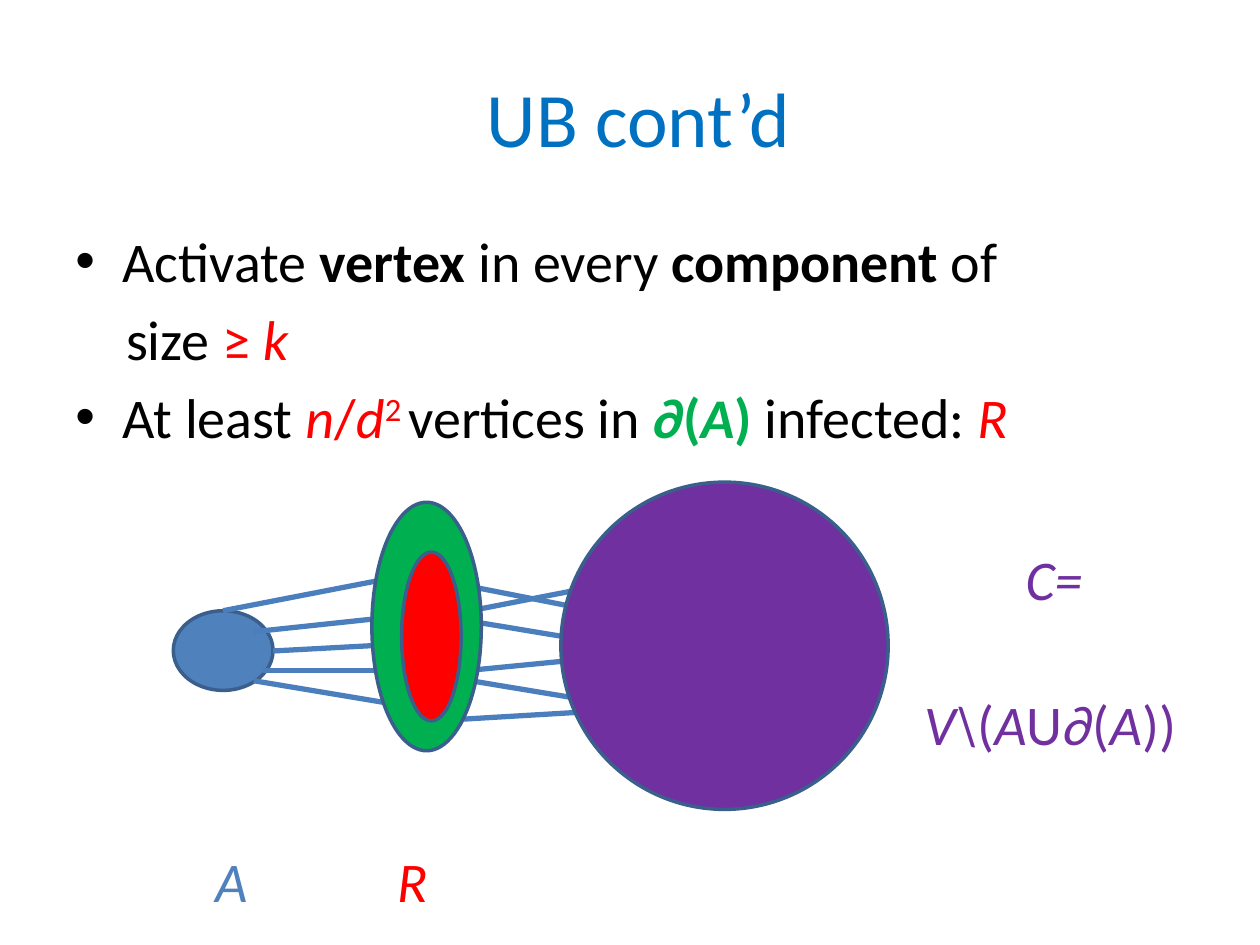
from pptx import Presentation
from pptx.dml.color import RGBColor as RGB
from pptx.enum.shapes import MSO_CONNECTOR as CONN, MSO_SHAPE as SHAPE
from pptx.enum.text import MSO_ANCHOR as ANCHOR, PP_ALIGN as ALIGN
from pptx.oxml.ns import qn
from pptx.util import Pt
from lxml.etree import SubElement as Sub

BLACK = RGB(0, 0, 0)
RED = RGB(0xFF, 0, 0)
GREEN = RGB(0, 0xB0, 0x50)
BLUE = RGB(0x4F, 0x81, 0xBD)
PURPLE = RGB(0x70, 0x30, 0xA0)
TITLE = RGB(0, 0x70, 0xC0)
EDGE = RGB(0x3A, 0x5F, 0x8C)
LINK = RGB(0x4B, 0x7E, 0xBC)


class Deck:
    font = "Calibri"
    size = 32
    indent = 27

    def __init__(self, wide, high):
        self.prs = Presentation()
        self.prs.slide_width, self.prs.slide_height = Pt(wide), Pt(high)
        self.slide = self.prs.slides.add_slide(self.prs.slide_layouts[6])

    def frame(self, left, top, wide, high, inset=True):
        box = self.slide.shapes.add_textbox(Pt(left), Pt(top), Pt(wide), Pt(high))
        text = box.text_frame
        text.word_wrap = True
        if not inset:
            text.margin_left = text.margin_right = 0
            text.margin_top = text.margin_bottom = 0
        return text

    def add_runs(self, para, runs, size=None):
        """Add runs of (text, colour, style); style holds b, i or ^ (raised)."""
        for words, color, style in runs:
            run = para.add_run()
            run.text = words
            font = run.font
            font.name, font.size = self.font, Pt(size or self.size)
            font.color.rgb = color
            font.bold, font.italic = "b" in style, "i" in style
            if "^" in style:
                run._r.get_or_add_rPr().set("baseline", "30000")

    def title(self, words, left, top, wide, high):
        text = self.frame(left, top, wide, high)
        text.vertical_anchor = ANCHOR.MIDDLE
        para = text.paragraphs[0]
        para.alignment = ALIGN.CENTER
        self.add_runs(para, [(words, TITLE, "")], 44)

    def body(self, items, left, top, wide, high):
        """Fill a box with (bulleted, runs) items."""
        text = self.frame(left, top, wide, high)
        for n, (dot, runs) in enumerate(items):
            para = text.add_paragraph() if n else text.paragraphs[0]
            para.space_before = Pt(6)
            props = para._p.get_or_add_pPr()
            props.set("marL", str(Pt(self.indent if dot else self.indent + 2)))
            if dot:
                props.set("indent", str(-Pt(self.indent)))
                Sub(props, qn("a:buFont"), typeface="Arial")
                Sub(props, qn("a:buChar"), char="•")
            self.add_runs(para, runs)

    def label(self, runs, left, top, wide):
        text = self.frame(left, top, wide, 40, inset=False)
        self.add_runs(text.paragraphs[0], runs)

    def oval(self, left, top, wide, high, fill):
        oval = self.slide.shapes.add_shape(
            SHAPE.OVAL, Pt(left), Pt(top), Pt(wide), Pt(high))
        oval.shadow.inherit = False
        oval.fill.solid()
        oval.fill.fore_color.rgb = fill
        oval.line.color.rgb, oval.line.width = EDGE, Pt(2)

    def link(self, *ends):
        line = self.slide.shapes.add_connector(CONN.STRAIGHT, *map(Pt, ends))
        line.line.color.rgb, line.line.width = LINK, Pt(3)
        Sub(line._element.spPr, qn("a:effectLst"))


def main():
    deck = Deck(720, 540)
    deck.title("UB cont’d", 41, 21.6, 648, 90)
    deck.body([
        (True, [("Activate ", BLACK, ""), ("vertex ", BLACK, "b"),
                ("in every", BLACK, ""), (" component", BLACK, "b"),
                (" of", BLACK, "")]),
        (False, [("size ", BLACK, ""), ("≥ ", RED, ""), ("k", RED, "i")]),
        (True, [("At least ", BLACK, ""), ("n", RED, "i"), ("/", RED, ""),
                ("d", RED, "i"), ("2 ", RED, "^"), ("vertices in ", BLACK, ""),
                ("∂", GREEN, "bi"), ("(", GREEN, "b"), ("A", GREEN, "bi"),
                (") ", GREEN, "b"), ("infected: ", BLACK, ""),
                ("R", RED, "i")]),
    ], 36, 126, 648, 140)

    deck.label([("C=", PURPLE, "i")], 586, 311, 60)
    deck.label([("V\\", PURPLE, "i"), ("(", PURPLE, ""), ("A", PURPLE, "i"),
                ("U", PURPLE, ""), ("∂", PURPLE, "i"), ("(", PURPLE, ""),
                ("A", PURPLE, "i"), ("))", PURPLE, "")], 528, 394, 170)
    deck.label([("A", BLUE, "i")], 123, 484, 40)
    deck.label([("R", RED, "i")], 227, 484, 40)

    deck.oval(99, 349, 57, 45.5, BLUE)
    for ends in [
        # from A to its border
        (145, 361, 258, 349), (150.5, 383, 252, 383), (156, 372, 258, 366.5),
        (145, 389, 247, 406), (127.5, 349, 241, 327),
        # from the border to the rest
        (269, 349, 382, 327), (269, 383, 382, 372), (247, 412, 348.5, 406),
        (269, 389, 371.5, 406), (269, 355, 371.5, 372), (258, 333, 400, 361),
    ]:
        deck.link(*ends)
    deck.oval(212.5, 287, 62.5, 142, GREEN)
    deck.oval(320.5, 275.5, 187, 187, PURPLE)
    deck.oval(229.5, 315.5, 34, 96.5, RED)
    deck.prs.save("out.pptx")


if __name__ == "__main__":
    main()
